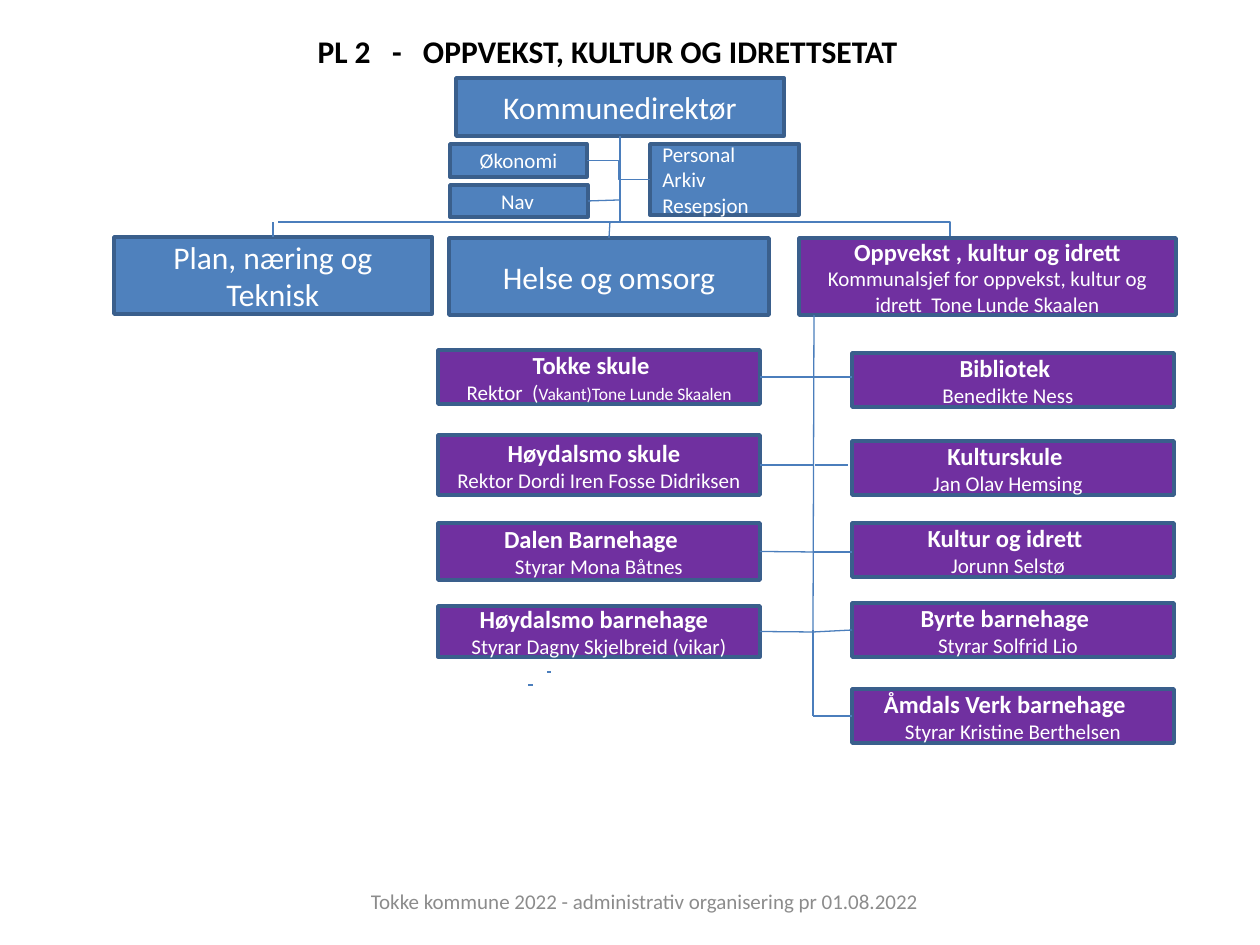
from pptx import Presentation
from pptx.dml.color import RGBColor as Rgb
from pptx.enum.shapes import MSO_CONNECTOR as Conn, MSO_SHAPE as Shape
from pptx.enum.text import MSO_ANCHOR as Anchor, MSO_AUTO_SIZE as Auto, PP_ALIGN as Align
from pptx.oxml.ns import qn
from pptx.util import Pt
from lxml.etree import SubElement

PX = 914400 / 126
HUES = {"blue": "4F81BD", "plum": "7030A0", "edge": "3A5F8C", "wire": "4B7EBC",
        "white": "FFFFFF", "black": "000000", "gray": "8C8C8C"}
TOP, LEFT, BOTTOM, RIGHT = range(4)

deck = Presentation()
deck.slide_width, deck.slide_height = round(1260 * PX), round(945 * PX)
slide = deck.slides.add_slide(deck.slide_layouts[5])
shapes = slide.shapes


def write(para, text, size, bold=False, hue="white", align=Align.CENTER, gap=0):
    """Add a run; gap is the right indent of the paragraph in px."""
    para.alignment = align
    # An explicit zero keeps the indent of the paragraph above from carrying over
    para._p.get_or_add_pPr().set("marR", str(round(gap * PX)))
    run = para.add_run()
    run.text = text
    run.font.color.rgb = Rgb.from_string(HUES[hue])
    style = {"name": "Calibri", "size": Pt(size), "bold": bold}
    for key, val in style.items():
        setattr(run.font, key, val)


def link(start, end, kind=Conn.STRAIGHT):
    """Draw a line; each end is a point (x, y) or a joint (box name, side)."""
    spots = [(0, 0) if isinstance(e[0], str) else e for e in (start, end)]
    wire = shapes.add_connector(kind, *[round(v * PX) for s in spots for v in s])
    for e, join in ((start, wire.begin_connect), (end, wire.end_connect)):
        if isinstance(e[0], str):
            join(boxes[e[0]], e[1])
    wire.line.color.rgb = Rgb.from_string(HUES["wire"])
    wire.line.width = Pt(0.75)
    SubElement(wire._element.spPr, qn("a:effectLst"))
    return wire


# Title and footer
title = shapes.title
foot = shapes.add_textbox(0, 0, 0, 0)
for item, area, anchor in ((title, (305, 26, 664, 50), Anchor.TOP),
                           (foot, (282, 876, 725, 50), Anchor.MIDDLE)):
    for key, val in zip(("left", "top", "width", "height"), area):
        setattr(item, key, round(val * PX))
    frame = item.text_frame
    form = {"word_wrap": True, "auto_size": Auto.NONE, "vertical_anchor": anchor}
    for key, val in form.items():
        setattr(frame, key, val)
write(title.text_frame.paragraphs[0], "PL 2   -   OPPVEKST, KULTUR OG IDRETTSETAT",
      18, True, "black", Align.LEFT)
write(foot.text_frame.paragraphs[0],
      "Tokke kommune 2022 - administrativ organisering pr 01.08.2022", 12, hue="gray")

# Boxes: name, area, hue, shape, lines of (text, size, bold, right gap)
FLOW, RECT = Shape.FLOWCHART_PROCESS, Shape.RECTANGLE
plan = [
    ("chief", (456, 78, 328, 58), "blue", FLOW, [("Kommunedirektør", 18, False, 0)]),
    ("tech", (114, 237, 318, 77), "blue", FLOW, [("Plan, næring og Teknisk", 18, False, 0)]),
    ("health", (449, 238, 320, 77), "blue", FLOW, [("Helse og omsorg", 18, False, 0)]),
    ("growth", (799, 238, 377, 77), "plum", FLOW,
     [("Oppvekst , kultur og idrett", 14, True, 0),
      ("Kommunalsjef for oppvekst, kultur og idrett  Tone Lunde Skaalen", 12, False, 0)]),
    ("money", (450, 144, 137, 33), "blue", RECT, [("Økonomi", 12, False, 0)]),
    ("nav", (450, 185, 138, 32), "blue", RECT, [("Nav", 12, False, 3)]),
    ("staff", (650, 144, 149, 71), "blue", RECT,
     [("Personal", 12, False, 0), ("Arkiv Resepsjon", 12, False, 0)]),
]

# Units in two columns: name, top, height, head, its gap, lead, its gap
units = {
    438: [("school", 350, 54, "Tokke skule", 16, "Rektor  (", 0),
          ("hill", 435, 60, "Høydalsmo skule", 10, "Rektor Dordi Iren Fosse Didriksen", 0),
          ("dale", 523, 57, "Dalen Barnehage", 16, "Styrar Mona Båtnes", 0),
          ("nursery", 606, 51, "Høydalsmo barnehage", 10, "Styrar Dagny Skjelbreid (vikar)", 0)],
    852: [("books", 353, 54, "Bibliotek", 16, "Benedikte Ness", 10),
          ("music", 441, 54, "Kulturskule", 16, "Jan Olav Hemsing", 10),
          ("sport", 523, 54, "Kultur og idrett", 16, "Jorunn Selstø", 10),
          ("byrte", 603, 54, "Byrte barnehage", 16, "Styrar Solfrid Lio", 10),
          ("works", 689, 54, "Åmdals Verk barnehage", 16, "Styrar Kristine Berthelsen", 0)],
}
for x, rows in units.items():
    for name, y, high, head, inset, lead, gap in rows:
        form = RECT if name == "nursery" else FLOW
        plan.append((name, (x, y, 322, high), "plum", form,
                     [(head, 14, True, inset), (lead, 12, False, gap)]))

boxes = {}
for name, area, hue, form, lines in plan:
    box = boxes[name] = shapes.add_shape(form, *[round(v * PX) for v in area])
    box.shadow.inherit = False
    box.fill.solid()
    box.fill.fore_color.rgb = Rgb.from_string(HUES[hue])
    box.line.color.rgb = Rgb.from_string(HUES["edge"])
    box.line.width = Pt(2)
    frame = box.text_frame
    frame.word_wrap, frame.vertical_anchor = True, Anchor.MIDDLE
    side = Align.LEFT if name == "staff" else Align.CENTER
    for i, (text, size, bold, gap) in enumerate(lines):
        para = frame.add_paragraph() if i else frame.paragraphs[0]
        write(para, text, size, bold, align=side, gap=gap)
write(boxes["school"].text_frame.paragraphs[1], "Vakant)Tone Lunde Skaalen", 10)

# Lines from the chief to the three sectors
link(("chief", BOTTOM), (620, 222))
link((624, 222), (278, 222))
link(("tech", TOP), (273, 222))
link((610, 222), ("health", TOP))
bend = link((617, 222), (950, 236), Conn.ELBOW)
bend._element.spPr.find(qn("a:prstGeom")).set("prst", "bentConnector2")

# Lines to the support units
link(("staff", LEFT), ("money", RIGHT), Conn.ELBOW)
link(("nav", RIGHT), (619, 200))

# Trunk and branches to the units
link((814, 315), (813, 630))
link((813, 630), (813, 716))
for name, y in (("school", 377), ("hill", 465), ("dale", 552), ("nursery", 632)):
    link((name, RIGHT), (813, y))
for name, y in (("byrte", 632), ("works", 716)):
    link((813, y), (name, LEFT))
for x, y, end in ((813, 377, 852), (815, 465, 848), (813, 552, 852)):
    link((x, y), (end, y))

# Two short dashes below the left column
for x, y, wide in ((528, 685, 5), (547, 672, 4)):
    link((x, y), (x + wide, y), Conn.ELBOW)

deck.save("out.pptx")
